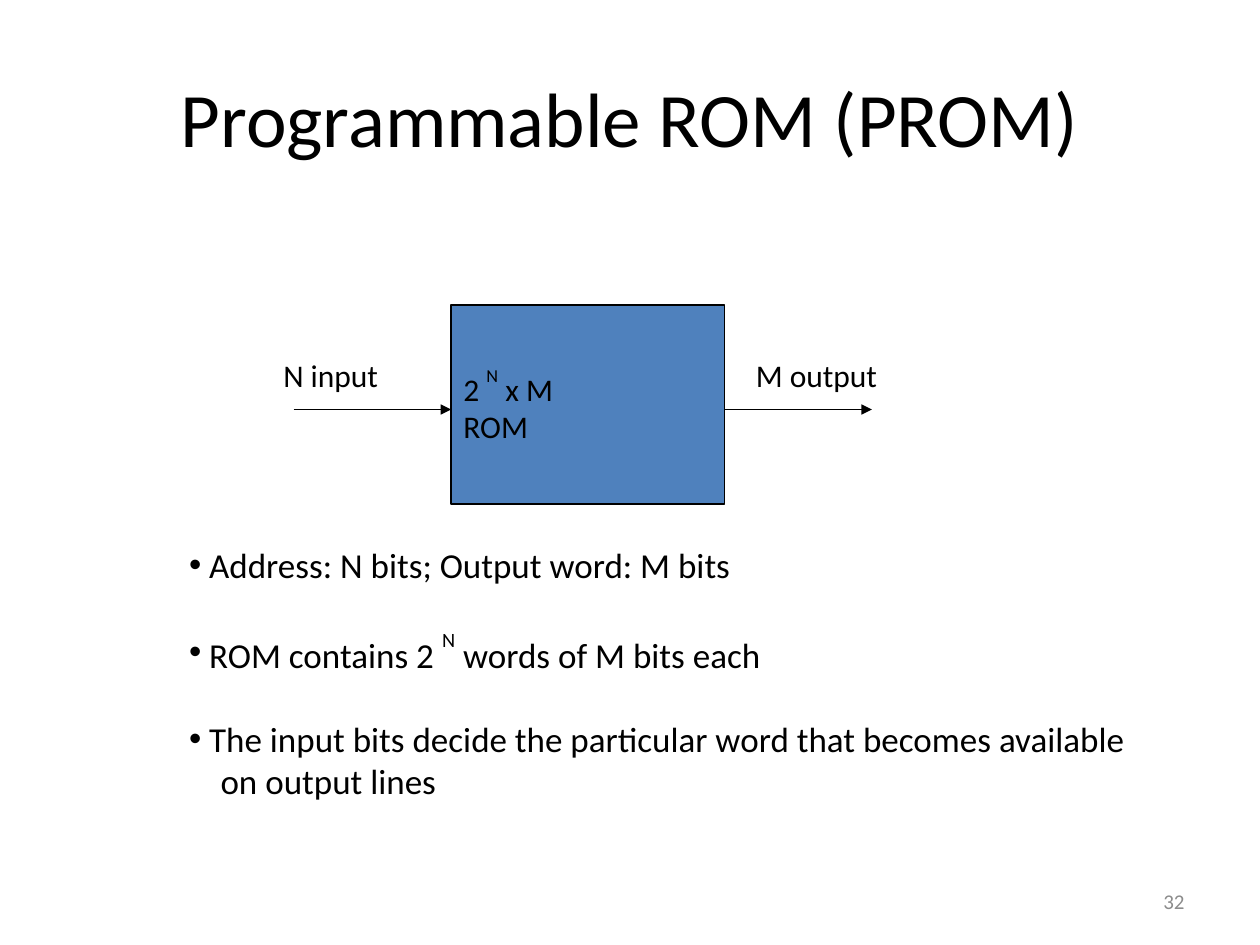
from lxml import etree
from pptx import Presentation
from pptx.dml.color import RGBColor
from pptx.enum.shapes import MSO_CONNECTOR, MSO_SHAPE
from pptx.enum.text import MSO_ANCHOR, MSO_AUTO_SIZE, PP_ALIGN
from pptx.oxml.ns import qn
from pptx.util import Inches, Pt

STRAIGHT = MSO_CONNECTOR.STRAIGHT
RECTANGLE = MSO_SHAPE.RECTANGLE
MIDDLE, TOP = MSO_ANCHOR.MIDDLE, MSO_ANCHOR.TOP
NO_AUTOFIT = MSO_AUTO_SIZE.NONE
LEFT, CENTER, RIGHT = PP_ALIGN.LEFT, PP_ALIGN.CENTER, PP_ALIGN.RIGHT

FONT = "Calibri"
BLACK, BLUE, GRAY = "000000", "4F81BD", "8C8C8C"
TITLE_AND_CONTENT = 1


def color(hex_string):
    return RGBColor.from_string(hex_string)


def place(shape, left, top, width, height):
    shape.left, shape.top = Inches(left), Inches(top)
    shape.width, shape.height = Inches(width), Inches(height)


def add_runs(paragraph, runs, size, font_color=BLACK, align=LEFT):
    """Add runs to a paragraph; a run starting with ^ is raised."""
    paragraph.alignment = align
    for text in runs:
        run = paragraph.add_run()
        run.text = text.removeprefix("^")
        run.font.name = FONT
        run.font.size = Pt(size)
        run.font.color.rgb = color(font_color)
        if text.startswith("^"):
            run.font._element.set("baseline", "60000")


def set_bullet(paragraph, indent, bullet):
    properties = paragraph._p.get_or_add_pPr()
    properties.set("marL", str(Inches(indent)))
    properties.set("indent", str(-Inches(indent) if bullet else 0))
    if bullet:
        etree.SubElement(properties, qn("a:buFont"), typeface="Arial")
        etree.SubElement(properties, qn("a:buChar"), char="•")
    else:
        etree.SubElement(properties, qn("a:buNone"))


def add_label(slide, text, left, top, width, height, size=18,
              font_color=BLACK, align=LEFT, anchor=TOP):
    frame = slide.shapes.add_textbox(
        Inches(left), Inches(top), Inches(width), Inches(height)).text_frame
    frame.word_wrap = align == RIGHT
    frame.vertical_anchor = anchor
    add_runs(frame.paragraphs[0], [text], size, font_color, align)


def add_arrow(slide, start, end, y):
    arrow = slide.shapes.add_connector(
        STRAIGHT, Inches(start), Inches(y), Inches(end), Inches(y))
    arrow.line.color.rgb = color(BLACK)
    arrow.line.width = Pt(0.75)
    etree.SubElement(arrow.line._get_or_add_ln(), qn("a:tailEnd"), type="triangle")
    etree.SubElement(arrow._element.spPr, qn("a:effectLst"))


def add_title(slide, left, top, width, height):
    title = slide.shapes.title
    place(title, left, top, width, height)
    title.text_frame.vertical_anchor = MIDDLE
    add_runs(title.text_frame.paragraphs[0], ["Programmable ROM (PROM)"], 44, align=CENTER)


def add_diagram(slide, left, top, width, height):
    """The ROM block, with its input and output beside it."""
    block_left, block_width = left + 1.43, 2.17
    block_right = block_left + block_width
    arrow_y = top + 0.83

    # ROM block
    block = slide.shapes.add_shape(
        RECTANGLE, Inches(block_left), Inches(top), Inches(block_width), Inches(height))
    block.shadow.inherit = False
    block.fill.solid()
    block.fill.fore_color.rgb = color(BLUE)
    block.line.color.rgb = color(BLACK)
    block.line.width = Pt(0.75)
    frame = block.text_frame
    frame.word_wrap = False
    frame.vertical_anchor = MIDDLE
    add_runs(frame.paragraphs[0], ["2 ", "^N", " x M"], 18)
    add_runs(frame.add_paragraph(), ["ROM"], 18)

    # Arrows and their labels
    add_arrow(slide, left + 0.18, block_left, arrow_y)
    add_arrow(slide, block_right, left + width - 0.17, arrow_y)
    add_label(slide, "N input", left, top + 0.36, 1, 0.4)
    add_label(slide, "M output", left + width - 1.19, top + 0.36, 1.19, 0.4)


def add_points(slide, left, top, width, height):
    body = slide.placeholders[1]
    place(body, left, top, width, height)
    frame = body.text_frame
    frame.auto_size = NO_AUTOFIT
    frame.vertical_anchor = TOP
    # Runs, indent, bullet, space before
    points = [
        (["Address: N bits; Output word: M bits"], 0.16, True, 0),
        (["ROM contains 2 ", "^N", " words of M bits each"], 0.16, True, 24),
        (["The input bits decide the particular word that becomes available"],
         0.16, True, 24),
        (["on output lines"], 0.25, False, 0),
    ]
    for index, (runs, indent, bullet, space) in enumerate(points):
        paragraph = frame.add_paragraph() if index else frame.paragraphs[0]
        paragraph.space_before = Pt(space)
        set_bullet(paragraph, indent, bullet)
        add_runs(paragraph, runs, 20)


def main():
    presentation = Presentation()
    presentation.slide_width, presentation.slide_height = Inches(10), Inches(7.5)
    slide = presentation.slides.add_slide(presentation.slide_layouts[TITLE_AND_CONTENT])
    add_title(slide, 0.5, 0.3, 9, 1.25)
    add_diagram(slide, 2.15, 2.42, 4.94, 1.58)
    add_points(slide, 1.4, 4.26, 8.45, 2.7)
    # Slide number
    add_label(slide, "32", 7.17, 6.95, 2.33, 0.4, 12, GRAY, RIGHT, MIDDLE)
    presentation.save("out.pptx")


if __name__ == "__main__":
    main()
